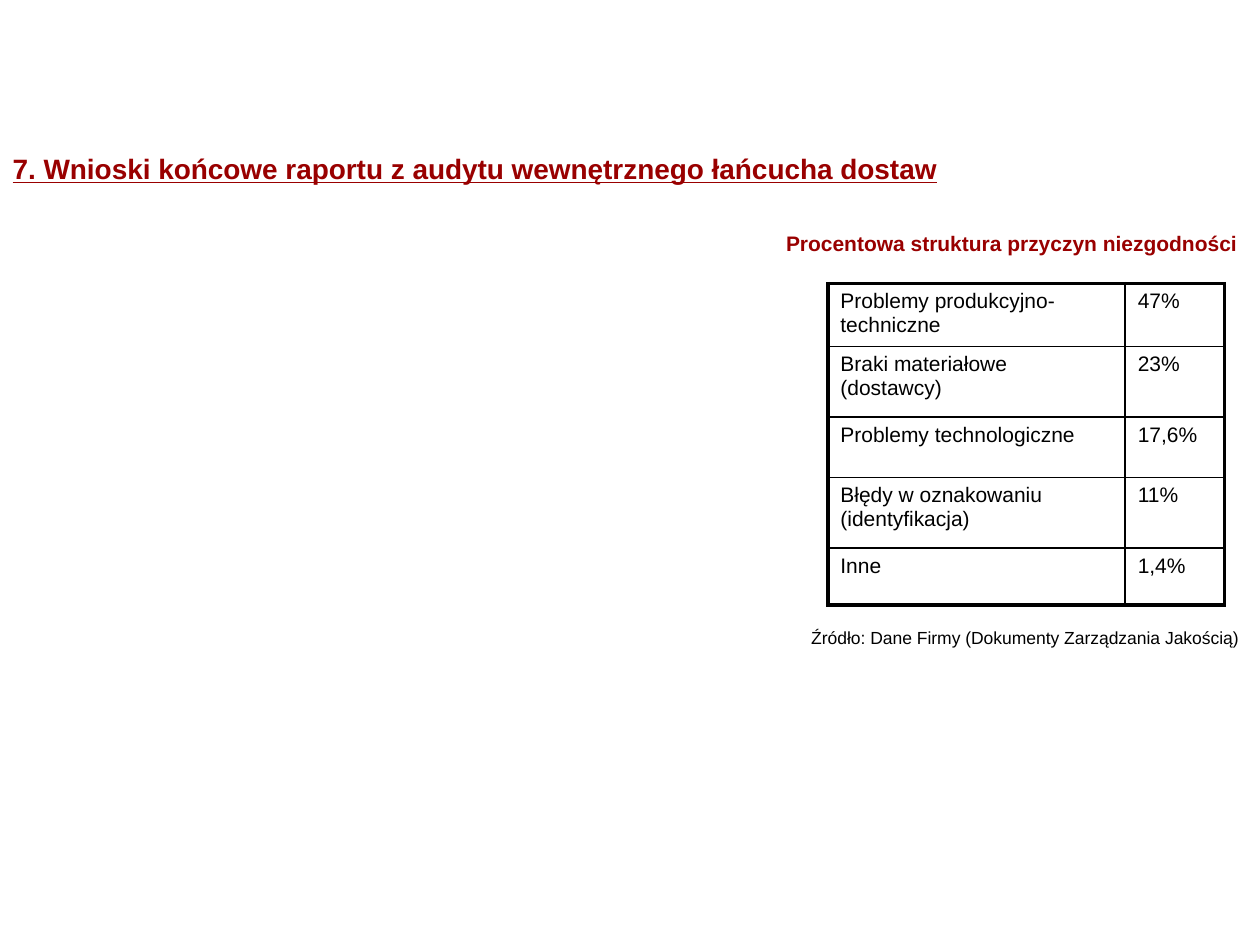
"""Build the slide with the final conclusions of the supply chain audit."""
from lxml import etree
from pptx import Presentation
from pptx.dml.color import RGBColor
from pptx.enum.text import MSO_ANCHOR, MSO_AUTO_SIZE, PP_ALIGN
from pptx.oxml.ns import qn
from pptx.util import Inches, Pt

TOP = MSO_ANCHOR.TOP
FIT = MSO_AUTO_SIZE.SHAPE_TO_FIT_TEXT
LEFT = PP_ALIGN.LEFT
COLORS = {"red": "990000", "black": "000000"}
TITLE = "7. Wnioski końcowe raportu z audytu wewnętrznego łańcucha dostaw"
CAUSES = [
    ("Problemy produkcyjno-techniczne", "47%"),
    ("Braki materiałowe (dostawcy)", "23%"),
    ("Problemy technologiczne", "17,6%"),
    ("Błędy w oznakowaniu (identyfikacja)", "11%"),
    ("Inne", "1,4%"),
]
WIDTHS = [2.36, 0.79]
HEIGHTS = [0.5, 0.56, 0.48, 0.56, 0.45]
THIN, THICK = 1, 2.25


def write(frame, text, size, color, bold=False, line=False):
    frame.text = text
    para = frame.paragraphs[0]
    para.alignment = LEFT
    font = para.runs[0].font
    font.name = "Arial"
    font.size = Pt(size)
    font.bold = bold
    font.underline = line
    font.color.rgb = RGBColor.from_string(COLORS[color])


def place(shape, left, top, width, height):
    shape.left, shape.top = Inches(left), Inches(top)
    shape.width, shape.height = Inches(width), Inches(height)


def add_title(slide):
    title = slide.shapes.title
    place(title, 0, 1.15, 8.43, 0.37)
    frame = title.text_frame
    write(frame, TITLE, 16, "red", bold=True, line=True)
    frame.vertical_anchor = TOP
    frame.auto_size = FIT
    frame.word_wrap = False


def add_label(slide, box, text, size, color, bold=False):
    label = slide.shapes.add_textbox(*map(Inches, box))
    frame = label.text_frame
    write(frame, text, size, color, bold)
    frame.auto_size = FIT
    frame.word_wrap = False


def set_edge(cell, side, width):
    props = cell._tc.get_or_add_tcPr()
    edge = etree.SubElement(props, qn(f"a:{side}"), w=str(Pt(width)))
    fill = etree.SubElement(edge, qn("a:solidFill"))
    etree.SubElement(fill, qn("a:srgbClr"), val=COLORS["black"])


def add_causes(slide):
    rows, cols = len(CAUSES), len(WIDTHS)
    box = map(Inches, (6.57, 2.25, sum(WIDTHS), sum(HEIGHTS)))
    table = slide.shapes.add_table(rows, cols, *box).table
    table.first_row = table.horz_banding = False
    for col, width in zip(table.columns, WIDTHS):
        col.width = Inches(width)
    for row, height in zip(table.rows, HEIGHTS):
        row.height = Inches(height)
    for i, cause in enumerate(CAUSES):
        for j, text in enumerate(cause):
            cell = table.cell(i, j)
            write(cell.text_frame, text, 12, "black")
            outer = {"lnL": j == 0, "lnR": j == cols - 1,
                     "lnT": i == 0, "lnB": i == rows - 1}
            for side, thick in outer.items():
                set_edge(cell, side, THICK if thick else THIN)
            cell.fill.background()


def main():
    deck = Presentation()
    deck.slide_width, deck.slide_height = Inches(10), Inches(7.5)
    slide = deck.slides.add_slide(deck.slide_layouts[5])
    add_title(slide)
    add_causes(slide)
    add_label(slide, (6.14, 1.78, 3.86, 0.3),
              "Procentowa struktura przyczyn niezgodności", 12, "red", bold=True)
    add_label(slide, (6.34, 4.93, 3.66, 0.27),
              "Źródło: Dane Firmy (Dokumenty Zarządzania Jakością)", 10, "black")
    deck.save("out.pptx")


if __name__ == "__main__":
    main()
